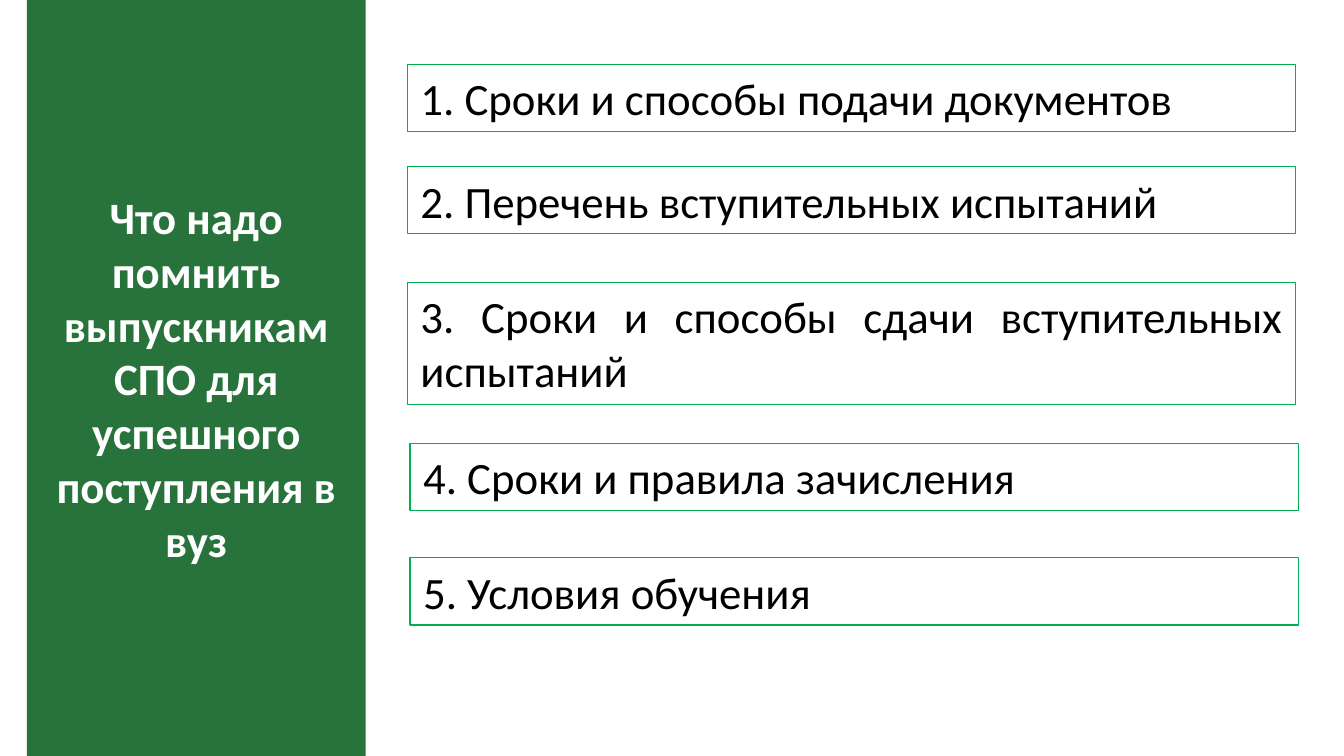
from pptx import Presentation
from pptx.dml.color import RGBColor
from pptx.enum.text import MSO_ANCHOR as Anchor, MSO_AUTO_SIZE as AutoSize, PP_ALIGN as Align
from pptx.util import Inches, Pt

PANEL_GREEN = "27733B"
BORDER_GREEN = "00B050"
WHITE = "FFFFFF"
BLACK = "000000"

SLIDE_WIDTH = 10
SLIDE_HEIGHT = SLIDE_WIDTH * 9 / 16
BOX_WIDTH = 6.61

HEADING = "Что надо помнить выпускникам СПО для успешного поступления в вуз"

# Left, top, height, wording
REMINDERS = [
    (3.03, 0.48, 0.5, "1. Сроки и способы подачи документов"),
    (3.03, 1.24, 0.5, "2. Перечень вступительных испытаний"),
    (3.03, 2.1, 0.91, "3. Сроки и способы сдачи вступительных испытаний"),
    (3.05, 3.3, 0.5, "4. Сроки и правила зачисления"),
    (3.05, 4.15, 0.5, "5. Условия обучения"),
]


def color(hex_code):
    return RGBColor.from_string(hex_code)


def write(frame, text, align, hex_code, bold=False):
    frame.word_wrap = True
    paragraph = frame.paragraphs[0]
    paragraph.text = text
    paragraph.alignment = align
    font = paragraph.font
    font.name, font.size, font.bold = "Calibri", Pt(24), bold
    font.color.rgb = color(hex_code)


def add_heading_panel(slide):
    panel = slide.shapes.title
    panel.left, panel.top = Inches(0.2), Inches(0)
    panel.width, panel.height = Inches(2.52), Inches(SLIDE_HEIGHT)
    panel.fill.solid()
    panel.fill.fore_color.rgb = color(PANEL_GREEN)
    frame = panel.text_frame
    frame.auto_size = AutoSize.NONE
    frame.vertical_anchor = Anchor.MIDDLE
    write(frame, HEADING, Align.CENTER, WHITE, bold=True)


def add_reminder(slide, left, top, height, text):
    box = slide.shapes.add_textbox(
        Inches(left), Inches(top), Inches(BOX_WIDTH), Inches(height))
    box.line.color.rgb = color(BORDER_GREEN)
    box.line.width = Pt(0.75)
    box.text_frame.auto_size = AutoSize.SHAPE_TO_FIT_TEXT
    write(box.text_frame, text, Align.JUSTIFY, BLACK)


def main():
    prs = Presentation()
    prs.slide_width, prs.slide_height = Inches(SLIDE_WIDTH), Inches(SLIDE_HEIGHT)
    slide = prs.slides.add_slide(prs.slide_layouts[5])  # title only

    # Green side panel with the heading
    add_heading_panel(slide)

    # Outlined reminders
    for reminder in REMINDERS:
        add_reminder(slide, *reminder)

    prs.save("out.pptx")


if __name__ == "__main__":
    main()
